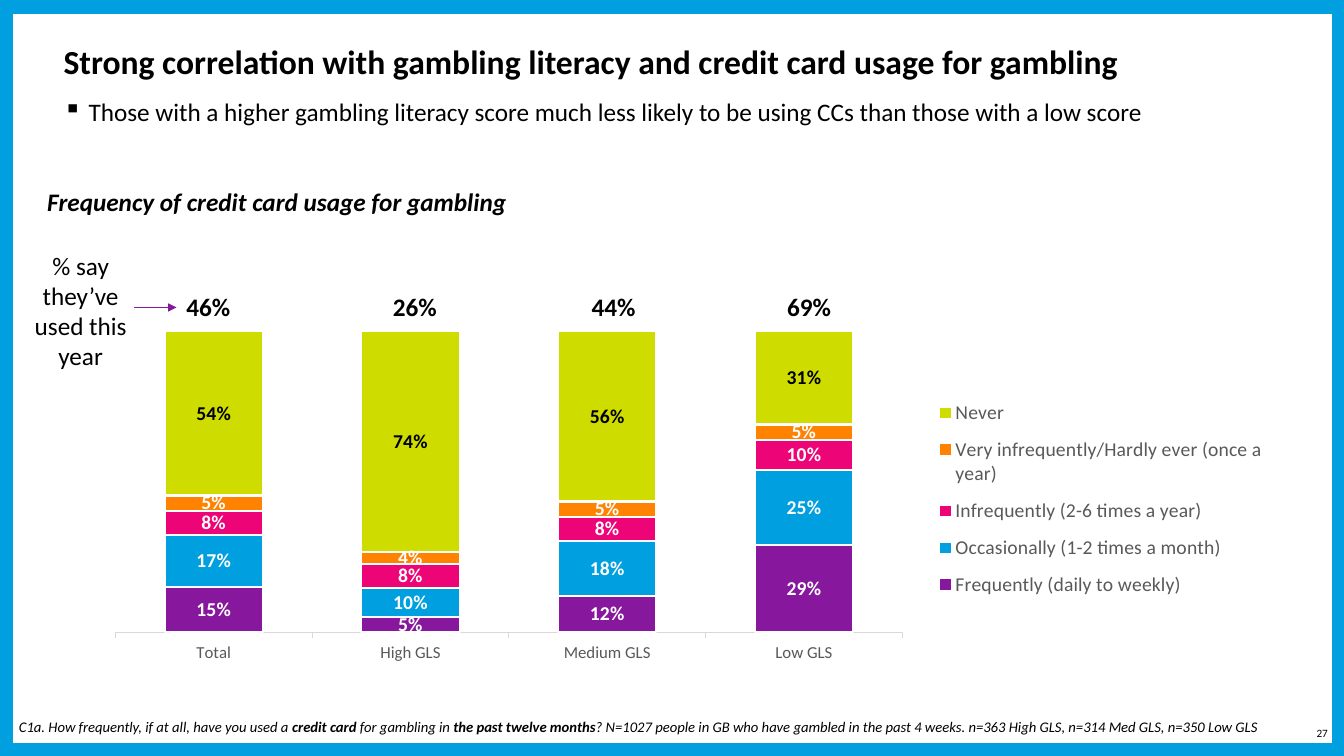
"""Build the slide on gambling literacy and credit card usage."""
from dataclasses import dataclass
from typing import Any

from lxml.etree import SubElement
from pptx import Presentation
from pptx.chart.chart import Chart
from pptx.chart.data import CategoryChartData
from pptx.dml.color import RGBColor
from pptx.enum.chart import XL_CHART_TYPE, XL_LABEL_POSITION, XL_LEGEND_POSITION, XL_TICK_LABEL_POSITION
from pptx.enum.shapes import MSO_CONNECTOR, MSO_SHAPE
from pptx.enum.text import MSO_ANCHOR, MSO_AUTO_SIZE, PP_ALIGN
from pptx.oxml.ns import qn
from pptx.slide import Slide
from pptx.text.text import TextFrame
from pptx.util import Inches, Pt


@dataclass(frozen=True)
class Theme:
    face: str = "Calibri"
    black: str = "000000"
    white: str = "FFFFFF"
    blue: str = "009FDF"
    purple: str = "87189D"
    pink: str = "ED0477"
    orange: str = "FF8200"
    lime: str = "CEDC00"
    gray: str = "595959"
    rule: str = "D9D9D9"
    title: float = 24
    body: float = 18
    label: float = 14
    axis: float = 12
    note: float = 10.5
    page: float = 8


THEME = Theme()
Box = tuple[float, float, float, float]


@dataclass(frozen=True)
class Panel:
    box: Box
    color: str


@dataclass(frozen=True)
class Text:
    """Text whose odd-numbered runs are bold."""
    box: Box
    runs: tuple[str, ...]
    size: float = THEME.body
    bold: bool = False
    italic: bool = False
    align: PP_ALIGN = PP_ALIGN.LEFT
    wrap: bool = True
    anchor: MSO_ANCHOR = MSO_ANCHOR.TOP
    fit: MSO_AUTO_SIZE = MSO_AUTO_SIZE.SHAPE_TO_FIT_TEXT


@dataclass(frozen=True)
class Band:
    name: str
    values: tuple[float, ...]
    color: str
    ink: str = THEME.white


@dataclass(frozen=True)
class Total:
    left: float
    value: str


PANELS = (
    Panel((0, 0, 13.33, 7.5), THEME.blue),
    Panel((0.13, 0.14, 13.08, 7.23), THEME.white),
)
GROUPS = ("Total", "High GLS", "Medium GLS", "Low GLS")
BANDS = (
    Band("Frequently (daily to weekly)", (0.15, 0.05, 0.12, 0.29), THEME.purple),
    Band("Occasionally (1-2 times a month)", (0.17, 0.1, 0.18, 0.25), THEME.blue),
    Band("Infrequently (2-6 times a year)", (0.08, 0.08, 0.08, 0.1), THEME.pink),
    Band("Very infrequently/Hardly ever (once a year)", (0.05, 0.04, 0.05, 0.05), THEME.orange),
    Band("Never", (0.54, 0.74, 0.56, 0.31), THEME.lime, THEME.black),
)
TOTALS = (Total(1.29, "46%"), Total(3.34, "26%"), Total(5.31, "44%"), Total(7.25, "69%"))
TITLE = Text((0.53, 0.4, 10.95, 0.88),
             ("Strong correlation with gambling literacy and credit card usage for gambling",),
             THEME.title, bold=True, fit=MSO_AUTO_SIZE.NONE)
POINT = Text((0.53, 0.94, 12.34, 0.52),
             ("Those with a higher gambling literacy score much less likely to be using CCs "
              "than those with a low score",), fit=MSO_AUTO_SIZE.NONE)
TEXTS = (
    Text((12.93, 7.17, 0.34, 0.2), ("27",), THEME.page, align=PP_ALIGN.RIGHT,
         wrap=False, anchor=MSO_ANCHOR.MIDDLE, fit=MSO_AUTO_SIZE.NONE),
    Text((0.09, 7.07, 12.86, 0.28),
         ("C1a. How frequently, if at all, have you used a ", "credit card",
          " for gambling in ", "the past twelve months",
          "? N=1027 people in GB who have gambled in the past 4 weeks. "
          "n=363 High GLS, n=314 Med GLS, n=350 Low GLS"), THEME.note, italic=True),
    Text((0.37, 1.8, 6.01, 0.4), ("Frequency of credit card usage for gambling",),
         bold=True, italic=True),
    Text((0.22, 2.43, 1.16, 1.31), ("% say they’ve used this year",), align=PP_ALIGN.CENTER),
    *(Text((t.left, 2.84, 1.55, 0.4), (t.value,), bold=True, align=PP_ALIGN.CENTER)
      for t in TOTALS),
)


def apply(item: Any, values: dict[str, Any]) -> None:
    for name, value in values.items():
        setattr(item, name, value)


def ink(font: Any, size: float, color: str, bold: bool = False, italic: bool = False) -> None:
    apply(font, {"name": THEME.face, "size": Pt(size), "bold": bold, "italic": italic})
    font.color.rgb = RGBColor.from_string(color)


def paint(form: Any, color: str) -> None:
    form.fill.solid()
    form.fill.fore_color.rgb = RGBColor.from_string(color)


def trace(line: Any, color: str, width: float) -> None:
    line.color.rgb = RGBColor.from_string(color)
    line.width = Pt(width)


def write(frame: TextFrame, text: Text) -> None:
    apply(frame, {"word_wrap": text.wrap, "auto_size": text.fit, "vertical_anchor": text.anchor})
    para = frame.paragraphs[0]
    para.alignment = text.align
    for i, words in enumerate(text.runs):
        run = para.add_run()
        run.text = words
        ink(run.font, text.size, THEME.black, text.bold or i % 2 == 1, text.italic)


def add_panel(slide: Slide, panel: Panel) -> None:
    shape = slide.shapes.add_shape(MSO_SHAPE.RECTANGLE, *map(Inches, panel.box))
    shape.shadow.inherit = False
    paint(shape, panel.color)
    shape.line.fill.background()


def add_text(slide: Slide, text: Text) -> TextFrame:
    frame = slide.shapes.add_textbox(*map(Inches, text.box)).text_frame
    write(frame, text)
    return frame


def add_title(slide: Slide) -> None:
    title = slide.shapes.title
    slide.shapes._spTree.append(title._element)
    apply(title, dict(zip(("left", "top", "width", "height"), map(Inches, TITLE.box))))
    write(title.text_frame, TITLE)
    title.text_frame.paragraphs[0].line_spacing = 0.9


def add_point(slide: Slide) -> None:
    para = add_text(slide, POINT).paragraphs[0]
    apply(para, {"line_spacing": 0.9, "space_after": Pt(4)})
    props = para._p.get_or_add_pPr()
    props.set("marL", str(Inches(0.25)))
    props.set("indent", str(Inches(-0.25)))
    SubElement(props, qn("a:buChar")).set("char", "▪")


def place(chart: Chart, tag: str, index: int, box: Box, inner: bool) -> None:
    part = chart._chartSpace.xpath(f".//{tag}")[0]
    for old in part.findall(qn("c:layout")):
        part.remove(old)
    layout = SubElement(part, qn("c:layout"))
    part.insert(index, layout)
    manual = SubElement(layout, qn("c:manualLayout"))
    rules = {"layoutTarget": "inner"} if inner else {}
    rules |= {"xMode": "edge", "yMode": "edge"} | dict(zip("xywh", map(str, box)))
    for name, value in rules.items():
        SubElement(manual, qn(f"c:{name}")).set("val", value)


def add_bars(slide: Slide) -> None:
    data = CategoryChartData(number_format="0%")
    data.categories = GROUPS
    for band in BANDS:
        data.add_series(band.name, band.values)
    chart = slide.shapes.add_chart(XL_CHART_TYPE.COLUMN_STACKED_100,
                                   *map(Inches, (0.18, 2.97, 12.86, 4)), data).chart
    ink(chart.font, THEME.axis, THEME.gray)
    apply(chart, {"has_title": False, "has_legend": True})
    plot = chart.plots[0]
    apply(plot, {"gap_width": 100, "overlap": 100, "vary_by_categories": False})
    for band, series in zip(BANDS, plot.series):
        paint(series.format, band.color)
        trace(series.format.line, THEME.white, 1.5)
        labels = series.data_labels
        apply(labels, {"show_value": True, "number_format": "0%",
                       "number_format_is_linked": False, "position": XL_LABEL_POSITION.CENTER})
        ink(labels.font, THEME.label, band.ink, bold=True)
    apply(chart.value_axis, {"visible": False, "has_major_gridlines": False,
                             "minimum_scale": 0, "maximum_scale": 1})
    axis = chart.category_axis
    axis.tick_label_position = XL_TICK_LABEL_POSITION.LOW
    trace(axis.format.line, THEME.rule, 0.75)
    ink(axis.tick_labels.font, THEME.axis, THEME.gray)
    apply(chart.legend, {"position": XL_LEGEND_POSITION.RIGHT, "include_in_layout": False})
    ink(chart.legend.font, THEME.label, THEME.gray)
    place(chart, "c:plotArea", 0, (0.075, 0.079, 0.607, 0.747), True)
    place(chart, "c:legend", 1, (0.7, 0.22, 0.27, 0.55), False)


def add_arrow(slide: Slide) -> None:
    arrow = slide.shapes.add_connector(MSO_CONNECTOR.STRAIGHT,
                                       *map(Inches, (1.33, 3.05, 1.75, 3.05)))
    trace(arrow.line, THEME.purple, 0.5)
    SubElement(arrow.line._get_or_add_ln(), qn("a:tailEnd")).set("type", "triangle")
    SubElement(arrow._element.spPr, qn("a:effectLst"))


def main() -> None:
    deck = Presentation()
    apply(deck, {"slide_width": Inches(13.33), "slide_height": Inches(7.5)})
    slide = deck.slides.add_slide(deck.slide_layouts[5])
    for panel in PANELS:
        add_panel(slide, panel)
    add_bars(slide)
    add_title(slide)
    add_point(slide)
    for text in TEXTS:
        add_text(slide, text)
    add_arrow(slide)
    deck.save("out.pptx")


if __name__ == "__main__":
    main()
